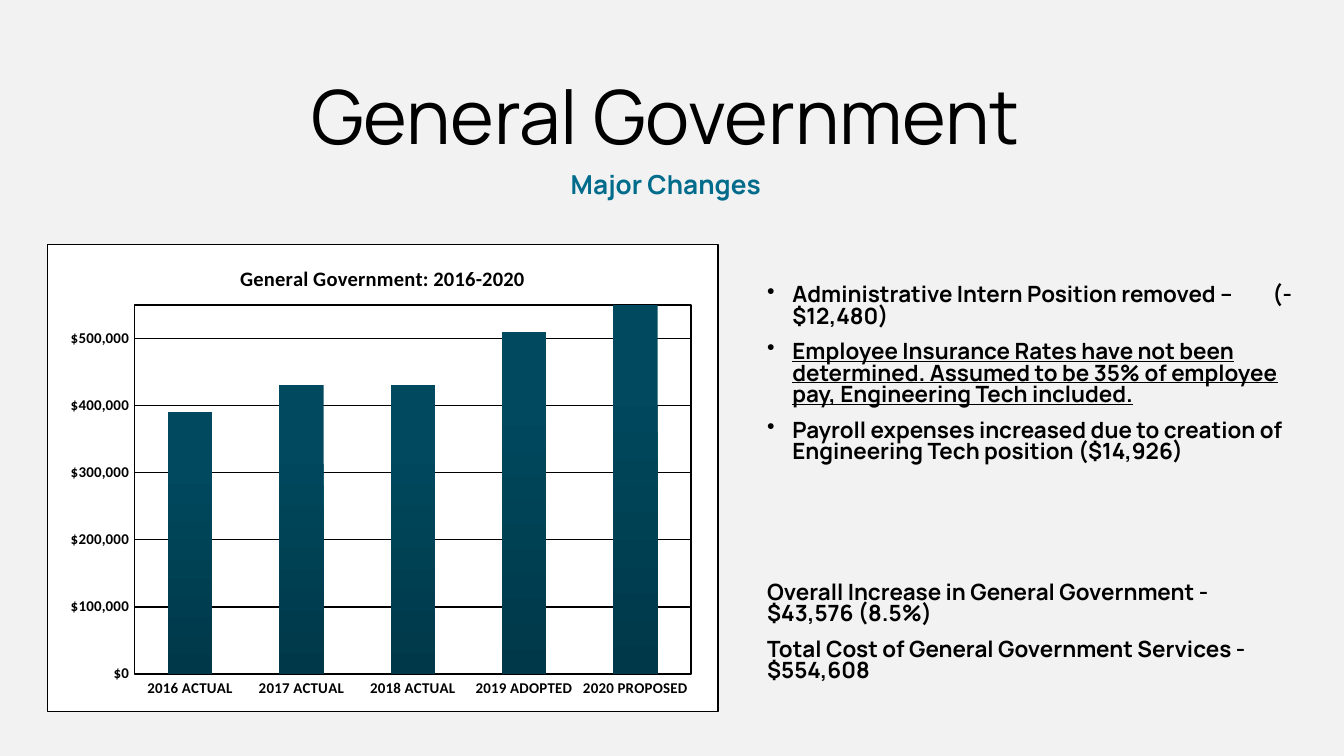
"""Build the General Government budget slide."""
from dataclasses import dataclass

import pptx
import pptx.chart.data
import pptx.dml.color
import pptx.enum.chart
import pptx.enum.text
import pptx.oxml
import pptx.oxml.ns
import pptx.util
from lxml import etree

Pt = pptx.util.Pt
CENTER = pptx.enum.text.PP_ALIGN.CENTER
LEFT = pptx.enum.text.PP_ALIGN.LEFT


@dataclass(frozen=True)
class Theme:
    """Hold the colours, fonts and type sizes of the slide."""
    background: str = "F2F2F2"
    ink: str = "000000"
    accent: str = "006B8B"
    paper: str = "FFFFFF"
    bar_low: str = "003849"
    bar_high: str = "00495F"
    text_font: str = "Manrope"
    chart_font: str = "Calibri"
    heading: float = 40
    subheading: float = 14
    body: float = 12
    chart_title: float = 11
    chart_base: float = 10
    axis: float = 8


THEME = Theme()


def rgb(value):
    """Return a colour object for a hex value."""
    return pptx.dml.color.RGBColor.from_string(value)


def style_font(font, size, color=THEME.ink, name=THEME.text_font, bold=True, underline=None):
    """Set the look of a font."""
    font.size, font.name, font.bold, font.underline = Pt(size), name, bold, underline
    font.color.rgb = rgb(color)


def add_bullet(para, indent):
    """Give a paragraph a hanging round bullet."""
    properties = para._p.get_or_add_pPr()
    properties.set("marL", str(Pt(indent)))
    properties.set("indent", str(-Pt(indent)))
    etree.SubElement(properties, pptx.oxml.ns.qn("a:buChar")).set("char", "•")


def add_text(page, box, texts, *, size, color=THEME.ink, bold=True, align=LEFT, before=7.5,
             insets=(0, 6, 0, 6), bullet=False, underlined=(), line_spacing=0.8):
    """Place paragraphs of one format in a text box."""
    frame = page.shapes.add_textbox(*map(Pt, box)).text_frame
    frame.word_wrap = True
    frame.margin_left, frame.margin_top, frame.margin_right, frame.margin_bottom = map(Pt, insets)
    for index, text in enumerate(texts):
        para = frame.add_paragraph() if index else frame.paragraphs[0]
        para.alignment, para.line_spacing, para.space_before = align, line_spacing, Pt(before)
        if bullet:
            add_bullet(para, 13.5)
        span = para.add_run()
        span.text = text
        style_font(span.font, size, color, bold=bold, underline=index in underlined)


def add_header(page, box):
    """Place the heading and the subheading below it."""
    left, top, width, height = box
    shared = dict(align=CENTER, before=10, insets=(0, 3.6, 7.2, 3.6))
    add_text(page, (left, top, width, 45.5), ["General Government"],
             size=THEME.heading, bold=False, line_spacing=0.85, **shared)
    add_text(page, (left + 196.5, top + 49, 327.5, height - 49), ["Major Changes"],
             size=THEME.subheading, color=THEME.accent, **shared)


def add_changes(page, box):
    """Place the list of changes and the totals at the foot of the box."""
    left, top, width, height = box
    add_text(page, (left, top, width, 24), [
        "Administrative Intern Position removed –         (-$12,480)",
        "Employee Insurance Rates have not been determined. "
        "Assumed to be 35% of employee pay, Engineering Tech included.",
        "Payroll expenses increased due to creation of Engineering Tech position ($14,926)",
    ], size=THEME.body, bullet=True, underlined=(1,))
    add_text(page, (left, top + height - 75, width, 75), [
        "Overall Increase in General Government - $43,576 (8.5%)",
        "Total Cost of General Government Services - $554,608",
    ], size=THEME.body)


def style_axis(axis, width):
    """Set the line, ticks and labels of a chart axis."""
    axis.major_tick_mark = axis.minor_tick_mark = pptx.enum.chart.XL_TICK_MARK.NONE
    style_font(axis.tick_labels.font, THEME.axis, name=THEME.chart_font)
    axis.format.line.color.rgb = rgb(THEME.ink)
    axis.format.line.width = Pt(width)


def shape_properties(fill):
    """Return chart area properties with a thin outline and the given fill."""
    return pptx.oxml.parse_xml(
        f'<c:spPr {pptx.oxml.ns.nsdecls("c", "a")}>{fill}<a:ln w="{Pt(0.75)}"><a:solidFill>'
        f'<a:srgbClr val="{THEME.ink}"/></a:solidFill></a:ln></c:spPr>')


def frame_chart(chart):
    """Fix the plot area and outline both the plot and the chart."""
    plot_area = chart._chartSpace.chart.plotArea
    for layout in plot_area.findall(pptx.oxml.ns.qn("c:layout")):
        plot_area.remove(layout)
    sizes = "".join(f'<c:{key} val="{value}"/>' for key, value in (
        ("layoutTarget", "inner"), ("xMode", "edge"), ("yMode", "edge"),
        ("x", 0.13), ("y", 0.13), ("w", 0.83), ("h", 0.79)))
    plot_area.insert(0, pptx.oxml.parse_xml(
        f'<c:layout {pptx.oxml.ns.nsdecls("c")}><c:manualLayout>{sizes}</c:manualLayout></c:layout>'))
    plot_area.append(shape_properties("<a:noFill/>"))
    paper = f'<a:solidFill><a:srgbClr val="{THEME.paper}"/></a:solidFill>'
    chart._chartSpace.chart.addnext(shape_properties(paper))


def add_budget_chart(page, box):
    """Place the column chart of yearly budgets."""
    data = pptx.chart.data.CategoryChartData()
    data.categories = ["2016 ACTUAL", "2017 ACTUAL", "2018 ACTUAL", "2019 ADOPTED", "2020 PROPOSED"]
    data.add_series("Series 1", (390000, 430000, 430000, 510000, 550000))
    chart = page.shapes.add_chart(
        pptx.enum.chart.XL_CHART_TYPE.COLUMN_STACKED, *map(Pt, box), data).chart
    style_font(chart.font, THEME.chart_base, name=THEME.chart_font, bold=False)
    chart.has_legend = False
    chart.has_title = True
    title = chart.chart_title.text_frame
    title.text = "General Government: 2016-2020"
    style_font(title.paragraphs[0].runs[0].font, THEME.chart_title, name=THEME.chart_font)

    style_axis(chart.category_axis, 1)
    values = chart.value_axis
    style_axis(values, 0.75)
    values.minimum_scale, values.maximum_scale, values.major_unit = 0, 550000, 100000
    values.tick_labels.number_format = '"$"#,##0'
    values.tick_labels.number_format_is_linked = False
    grid = values.major_gridlines.format.line
    grid.color.rgb, grid.width = rgb(THEME.ink), Pt(0.75)

    plot = chart.plots[0]
    plot.gap_width, plot.overlap, plot.vary_by_categories = 150, 100, False
    fill = plot.series[0].format.fill
    fill.gradient()
    fill.gradient_angle = 270
    for stop, color, position in zip(
            fill.gradient_stops, (THEME.bar_high, THEME.bar_low), (0.2, 1)):
        stop.color.rgb, stop.position = rgb(color), position
    frame_chart(chart)


def main():
    """Build and save the deck."""
    deck = pptx.Presentation()
    deck.slide_width, deck.slide_height = Pt(720), Pt(405)
    page = deck.slides.add_slide(deck.slide_layouts[6])
    page.background.fill.solid()
    page.background.fill.fore_color.rgb = rgb(THEME.background)
    add_header(page, (0, 41, 720, 66.5))
    add_changes(page, (411, 147, 284.5, 234.5))
    add_budget_chart(page, (25, 130.5, 360, 251))
    deck.save("out.pptx")


if __name__ == "__main__":
    main()
